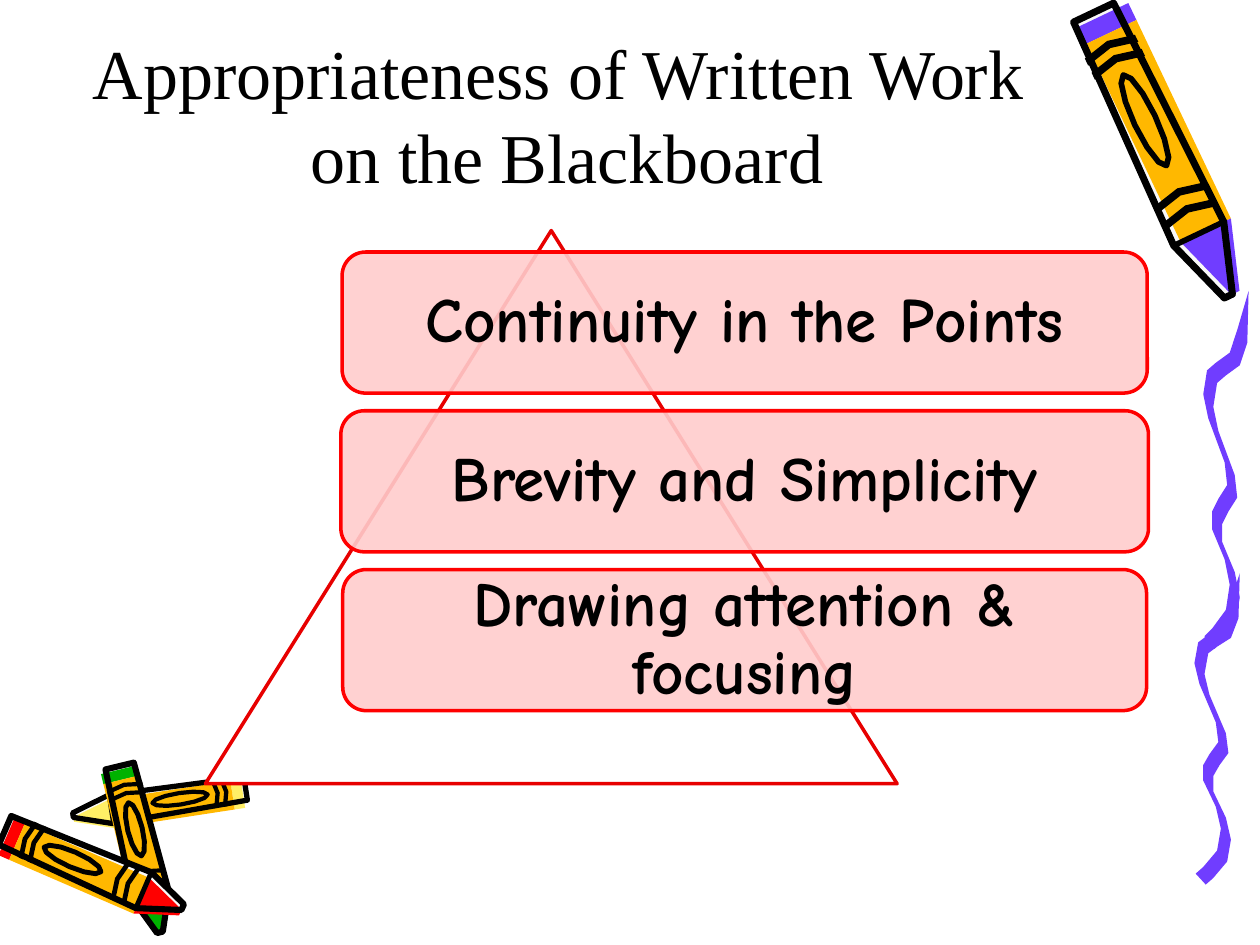
from dataclasses import dataclass
from math import cos, hypot, pi, sin

from lxml import etree
from pptx import Presentation
from pptx.dml.color import RGBColor
from pptx.enum.shapes import MSO_SHAPE
from pptx.enum.text import MSO_ANCHOR, PP_ALIGN
from pptx.oxml.ns import qn
from pptx.util import Inches, Pt

COLORS = {
    "black": "000000", "purple": "703DFF", "orange": "FFB800", "paper": "F8F8F8",
    "yellow": "FFEF66", "red": "FF0000", "green": "00B200", "white": "FFFFFF",
    "triangle": "E70000", "bar": "FFCCCC",
}

# Places along a crayon, as fractions of its length from the butt to the tip.
CAP_END, CONE_START = 0.08, 0.78
BANDS = [0.12, 0.17, 0.64, 0.70]
BAND_LENGTH, BAND_BOW = 0.025, 0.02
LABEL_CENTER, LABEL_HALF_LENGTH, LABEL_HALF_WIDTH = 0.38, 0.16, 0.2
TIP_HALF_WIDTH = 0.08

# The squiggle's bends and the half-size of the slanted nib that draws it, in inches.
BENDS = [(0.30, 0.36), (0.24, 0.54), (0.13, 0.62), (0.06, 0.68), (0.03, 0.87), (0.07, 1.06),
         (0.20, 1.41), (0.22, 1.59), (0.15, 1.70), (0.10, 1.80), (0.10, 1.94), (0.20, 2.18),
         (0.24, 2.38), (0.21, 2.58), (0.10, 2.73), (0.04, 2.79)]
SQUIGGLE_START = (0.35, 0)
NIB_X, NIB_Y = 0.04, 0.05


@dataclass
class Crayon:
    """A crayon's ends and width in inches; paint_shift moves its colour off its outline."""
    butt: tuple
    tip: tuple
    width: float
    color: str
    paint_shift: float
    pen: float

    def place(self, along, across):
        """Turn fractions of the length and width into inches."""
        dx, dy = self.tip[0] - self.butt[0], self.tip[1] - self.butt[1]
        sideways = across * self.width / hypot(dx, dy)
        return (self.butt[0] + along * dx + sideways * dy,
                self.butt[1] + along * dy - sideways * dx)


BIG_CRAYON = Crayon((0.68, 0.10), (1.75, 2.35), 0.44, "purple", 0.14, 4)
CRAYON_PILE = [
    Crayon((1.95, 0.26), (0.58, 0.47), 0.23, "yellow", 0.15, 3),
    Crayon((0.95, 0.08), (1.27, 1.40), 0.29, "green", -0.05, 3.5),
    Crayon((0.04, 0.59), (1.45, 1.20), 0.31, "red", -0.15, 3.5),
]


def rgb(name):
    return RGBColor.from_string(COLORS[name])


def draw_polygon(slide, left, top, points, fill=None, pen=0):
    corners = [(left + Inches(x), top + Inches(y)) for x, y in points]
    builder = slide.shapes.build_freeform(*corners[0])
    builder.add_line_segments(corners[1:], close=True)
    polygon = builder.convert_to_shape()
    polygon.shadow.inherit = False
    if fill:
        polygon.fill.solid()
        polygon.fill.fore_color.rgb = rgb(fill)
    else:
        polygon.fill.background()
    if pen:
        polygon.line.color.rgb = rgb("black")
        polygon.line.width = Pt(pen)
    else:
        polygon.line.fill.background()


def segment(start, end):
    return [(start, -0.5), (end, -0.5), (end, 0.5), (start, 0.5)]


def band(start):
    """A stripe around the crayon, bowed towards the butt."""
    end = start + BAND_LENGTH
    return [(start, -0.5), (start - BAND_BOW, 0), (start, 0.5),
            (end, 0.5), (end - BAND_BOW, 0), (end, -0.5)]


def label_ring(corner_count=12):
    angles = [2 * pi * corner / corner_count for corner in range(corner_count)]
    return [(LABEL_CENTER + LABEL_HALF_LENGTH * cos(angle), LABEL_HALF_WIDTH * sin(angle))
            for angle in angles]


def draw_crayon(slide, left, top, crayon):
    def draw(part, fill=None, pen=0, shift=0):
        points = [crayon.place(along, across + shift) for along, across in part]
        draw_polygon(slide, left, top, points, fill, pen)

    cone = [(CONE_START, -0.5), (1, -TIP_HALF_WIDTH), (1, TIP_HALF_WIDTH), (CONE_START, 0.5)]
    silhouette = [(0, -0.4), *cone, (0, 0.4)]
    draw(silhouette, "paper")
    for part, paint in [(segment(0.02, CAP_END), crayon.color),
                        (segment(CAP_END, CONE_START), "orange"), (cone, crayon.color)]:
        draw(part, paint, shift=crayon.paint_shift)
    for start in BANDS:
        draw(band(start), "black")
    draw(label_ring(), pen=crayon.pen * 0.8)
    draw(cone, pen=crayon.pen * 0.8)
    draw(silhouette, pen=crayon.pen)


def add_crayons(slide, left, top, crayons):
    for crayon in crayons:
        draw_crayon(slide, left, top, crayon)


def add_squiggle(slide, left, top):
    """Draw the wavy line: a full wave and a shorter one that continues it."""
    lower_edge = [(x + NIB_X, y + NIB_Y) for x, y in BENDS]
    upper_edge = [(x - NIB_X, y - NIB_Y) for x, y in reversed(BENDS)]
    outline = [SQUIGGLE_START, *lower_edge, *upper_edge]
    for shift_x, shift_y, stretch in [(-0.07, 2.24, 0.87), (0, 0, 1)]:
        wave = [(x, y * stretch) for x, y in outline]
        draw_polygon(slide, left + Inches(shift_x), top + Inches(shift_y), wave, "purple")


def write_centered(frame, text, font_name, size, bold=False):
    frame.word_wrap = True
    frame.vertical_anchor = MSO_ANCHOR.MIDDLE
    frame.text = text
    paragraph = frame.paragraphs[0]
    paragraph.alignment = PP_ALIGN.CENTER
    for run in paragraph.runs:
        run.font.name = font_name
        run.font.size = Pt(size)
        run.font.bold = bold
        run.font.color.rgb = rgb("black")


def add_title(slide, left, top, width, height):
    title = slide.shapes.add_textbox(left, top, width, height)
    write_centered(title.text_frame, "Appropriateness of Written Work \von the Blackboard",
                   "Times New Roman", 40)


def add_panel(slide, kind, box, fill, line):
    panel = slide.shapes.add_shape(kind, *box)
    panel.shadow.inherit = False
    panel.fill.solid()
    panel.fill.fore_color.rgb = rgb(fill)
    panel.line.color.rgb = rgb(line)
    panel.line.width = Pt(2)
    return panel


def add_bar(slide, box, label):
    bar = add_panel(slide, MSO_SHAPE.ROUNDED_RECTANGLE, box, "bar", "red")
    color = bar._element.spPr.find(qn("a:solidFill"))[0]
    etree.SubElement(color, qn("a:alpha"), val="90000")
    frame = bar.text_frame
    frame.margin_left = frame.margin_right = Inches(0.15)
    frame.margin_top = frame.margin_bottom = Inches(0.15)
    write_centered(frame, label, "Comic Neue", 36, bold=True)
    frame.paragraphs[0].line_spacing = 0.9


def add_pyramid_list(slide, left, top, width, height):
    add_panel(slide, MSO_SHAPE.ISOSCELES_TRIANGLE, (left, top, width, height), "white", "triangle")
    bars = [("Continuity in the Points", 6.39), ("Brevity and Simplicity", 6.41),
            ("Drawing attention & focusing", 6.38)]
    center = left + Inches(4.28)
    for row, (label, bar_width) in enumerate(bars):
        bar_top = top + Inches(0.17 + 1.26 * row)
        box = (center - Inches(bar_width / 2), bar_top, Inches(bar_width), Inches(1.12))
        add_bar(slide, box, label)


def main():
    prs = Presentation()
    prs.slide_width, prs.slide_height = Inches(10), Inches(7.5)
    slide = prs.slides.add_slide(prs.slide_layouts[6])
    add_crayons(slide, Inches(0), Inches(6), CRAYON_PILE)
    add_squiggle(slide, Inches(9.56), Inches(2.31))
    add_crayons(slide, Inches(8), Inches(0), [BIG_CRAYON])
    add_title(slide, Inches(0), Inches(0.25), Inches(9), Inches(1.3))
    add_pyramid_list(slide, Inches(1.63), Inches(1.83), Inches(5.49), Inches(4.39))
    prs.save("out.pptx")


if __name__ == "__main__":
    main()
